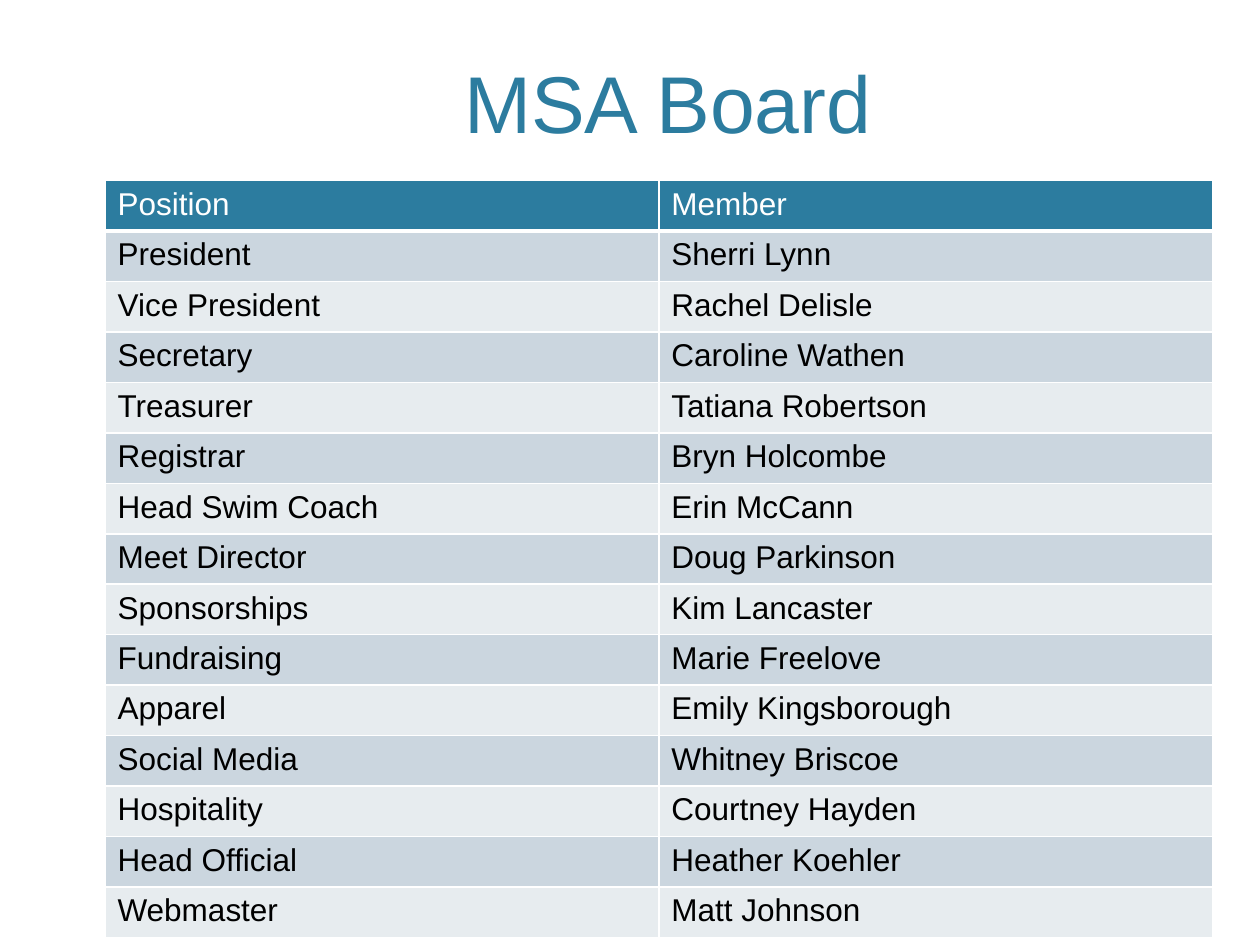
from lxml.etree import SubElement
from pptx import Presentation
from pptx.dml.color import RGBColor
from pptx.enum.text import MSO_ANCHOR, PP_ALIGN
from pptx.oxml.ns import qn
from pptx.util import Pt

COLORS = {
    "teal": "2C7C9F",
    "band_dark": "CBD6DF",
    "band_light": "E7ECEF",
    "white": "FFFFFF",
    "black": "000000",
}

BOARD = [
    ("Position", "Member"),
    ("President", "Sherri Lynn"),
    ("Vice President", "Rachel Delisle"),
    ("Secretary", "Caroline Wathen"),
    ("Treasurer", "Tatiana Robertson"),
    ("Registrar", "Bryn Holcombe"),
    ("Head Swim Coach", "Erin McCann"),
    ("Meet Director", "Doug Parkinson"),
    ("Sponsorships", "Kim Lancaster"),
    ("Fundraising", "Marie Freelove"),
    ("Apparel", "Emily Kingsborough"),
    ("Social Media", "Whitney Briscoe"),
    ("Hospitality", "Courtney Hayden"),
    ("Head Official", "Heather Koehler"),
    ("Webmaster", "Matt Johnson"),
]

COLUMN_WIDTH = 316.5
ROW_HEIGHT = 28.53


def write_text(frame, text, size=18, color="black", align=PP_ALIGN.LEFT):
    paragraph = frame.paragraphs[0]
    paragraph.alignment = align
    run = paragraph.add_run()
    run.text = text
    run.font.name = "Arial"
    run.font.size = Pt(size)
    run.font.bold = False
    run.font.color.rgb = RGBColor.from_string(COLORS[color])


def add_title(slide, text):
    title = slide.shapes.add_textbox(Pt(118), Pt(-16), Pt(540), Pt(105))
    frame = title.text_frame
    frame.word_wrap = True
    frame.vertical_anchor = MSO_ANCHOR.BOTTOM
    write_text(frame, text, size=46, color="teal", align=PP_ALIGN.CENTER)


def set_border(cell, side, width):
    properties = cell._tc.get_or_add_tcPr()
    line = SubElement(properties, qn(f"a:ln{side}"), w=str(Pt(width)))
    fill = SubElement(line, qn("a:solidFill"))
    SubElement(fill, qn("a:srgbClr"), val=COLORS["white"])


def format_cell(cell, text, row):
    is_header = row == 0
    if is_header:
        fill = "teal"
    else:
        fill = "band_dark" if row % 2 else "band_light"
    for side in "LRTB":
        heavy = (is_header and side == "B") or (row == 1 and side == "T")
        set_border(cell, side, 3 if heavy else 1)
    cell.fill.solid()
    cell.fill.fore_color.rgb = RGBColor.from_string(COLORS[fill])
    write_text(cell.text_frame, text, color="white" if is_header else "black")


def add_board_table(slide, board):
    columns = len(board[0])
    table = slide.shapes.add_table(
        len(board), columns, Pt(60), Pt(103.2),
        Pt(COLUMN_WIDTH * columns), Pt(ROW_HEIGHT * len(board)),
    ).table
    for column in table.columns:
        column.width = Pt(COLUMN_WIDTH)
    for row, entries in enumerate(board):
        table.rows[row].height = Pt(ROW_HEIGHT)
        for column, text in enumerate(entries):
            format_cell(table.cell(row, column), text, row)


def main():
    presentation = Presentation()
    presentation.slide_width = Pt(720)
    presentation.slide_height = Pt(540)
    slide = presentation.slides.add_slide(presentation.slide_layouts[6])
    add_title(slide, "MSA Board ")
    add_board_table(slide, BOARD)
    presentation.save("out.pptx")


if __name__ == "__main__":
    main()
